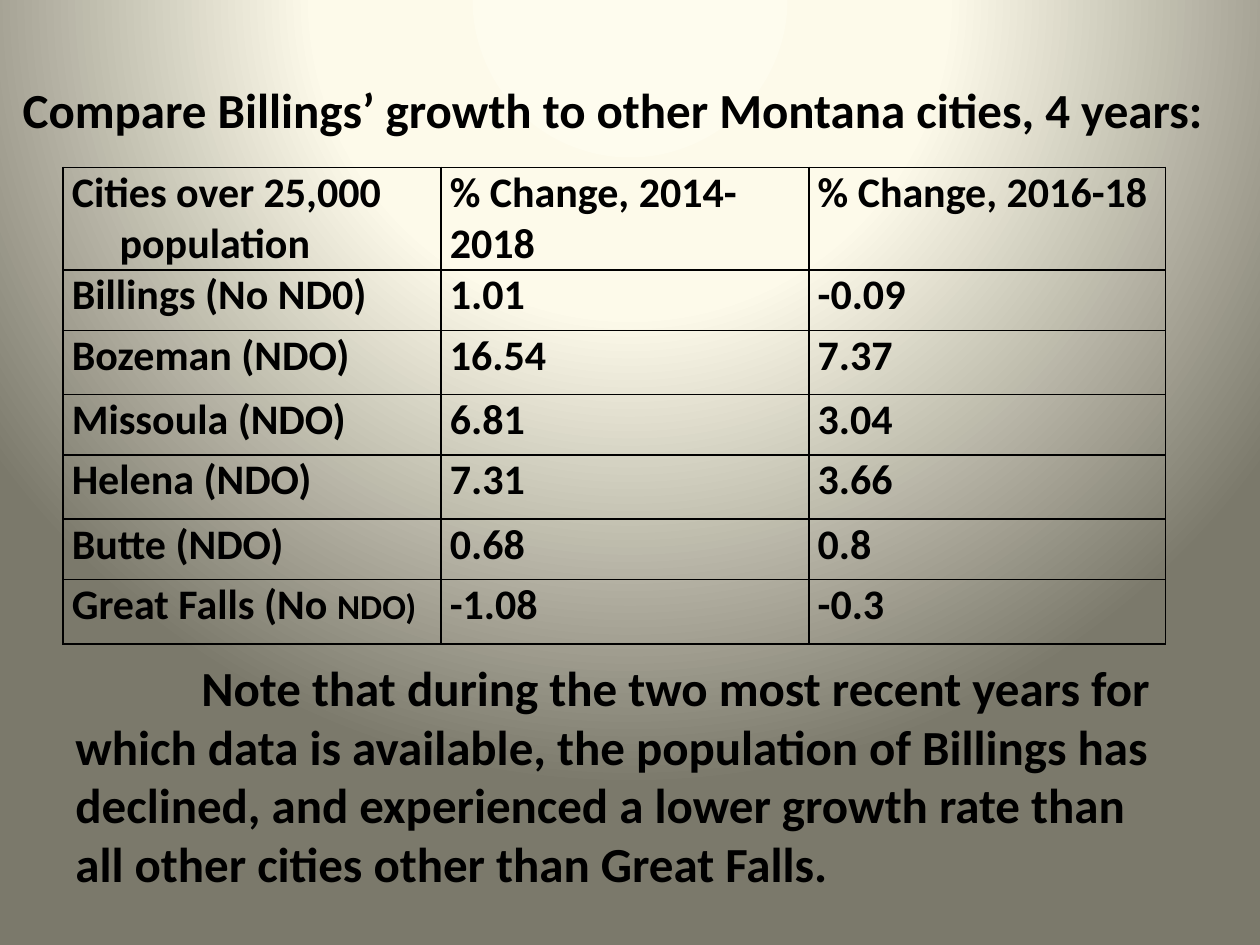
"""Build a slide comparing population growth across Montana cities."""
from dataclasses import dataclass

from pptx import Presentation
from pptx import util as u
from pptx.dml.color import RGBColor
from pptx.enum import text
from pptx.oxml import parse_xml
from pptx.oxml.ns import nsdecls

BLACK = RGBColor(0x00, 0x00, 0x00)
IVORY = RGBColor(0xFE, 0xFC, 0xEE)
CREAM = RGBColor(0xFD, 0xFA, 0xEA)
OLIVE = RGBColor(0x7B, 0x79, 0x6B)

WIDTH, HEIGHT = u.Inches(10), u.Inches(7.5)
FONT = "Calibri"
TITLE_SIZE, CELL_SIZE, SMALL_SIZE = 28, 24, 20
COLUMNS = (3, 2.92, 2.83)
ROW_HEIGHTS = (0.51, 0.48)


@dataclass(frozen=True)
class Area:
    """A rectangle in shares of the slide's size."""
    left: float
    top: float
    width: float
    height: float

    def place(self) -> tuple[int, int, int, int]:
        """Return the rectangle as slide lengths."""
        return (int(self.left * WIDTH), int(self.top * HEIGHT),
                int(self.width * WIDTH), int(self.height * HEIGHT))


@dataclass(frozen=True)
class City:
    """One city's row of the growth table."""
    name: str
    four_years: str
    two_years: str
    small_ending: str = ""


TITLE_AREA = Area(0.008, 0.077, 0.967, 0.076)
TABLE_AREA = Area(0.05, 0.177, 0.875, 0.464)
NOTE_AREA = Area(0.05, 0.689, 0.892, 0.265)

TITLE = "Compare Billings’ growth to other Montana cities, 4 years:"
NOTE = ("Note that during the two most recent years for which data is available, "
        "the population of Billings has declined, and experienced a lower growth "
        "rate than all other cities other than Great Falls.")
CITIES = (
    City("Cities over 25,000\npopulation", "% Change, 2014-2018", "% Change, 2016-18"),
    City("Billings (No ND0)", "1.01", "-0.09"),
    City("Bozeman (NDO)", "16.54", "7.37"),
    City("Missoula (NDO)", "6.81", "3.04"),
    City("Helena (NDO)", "7.31", "3.66"),
    City("Butte (NDO)", "0.68", "0.8"),
    City("Great Falls (No ", "-1.08", "-0.3", "NDO)"),
)


def paint_background(page) -> None:
    """Spread a circular gradient from above the slide."""
    page.background.fill.solid()
    stops = "".join(f'<a:gs pos="{share * 1000}"><a:srgbClr val="{color}"/></a:gs>'
                    for share, color in ((0, IVORY), (40, CREAM), (100, OLIVE)))
    gradient = parse_xml(
        f'<a:gradFill {nsdecls("a")} rotWithShape="1"><a:gsLst>{stops}</a:gsLst>'
        '<a:path path="circle"><a:fillToRect l="50000" t="-80000" r="50000" b="180000"/>'
        '</a:path></a:gradFill>')
    solid = page.element.xpath(".//p:bgPr/a:solidFill")[0]
    solid.getparent().replace(solid, gradient)


def style_paragraph(paragraph, size: float) -> None:
    """Set the bold black type shared by all text."""
    paragraph.alignment = text.PP_ALIGN.LEFT
    font = paragraph.font
    font.name, font.size, font.bold = FONT, u.Pt(size), True
    font.color.rgb = BLACK


def fill_box(shape, area: Area, words: str, indent: float = 0) -> None:
    """Place a shape and write one paragraph in it."""
    shape.left, shape.top, shape.width, shape.height = area.place()
    frame = shape.text_frame
    frame.word_wrap = True
    frame.auto_size = text.MSO_AUTO_SIZE.NONE
    frame.vertical_anchor = text.MSO_ANCHOR.TOP
    paragraph = frame.paragraphs[0]
    paragraph.text = words
    style_paragraph(paragraph, TITLE_SIZE)
    paragraph._p.get_or_add_pPr().set("indent", str(u.Inches(indent)))


def draw_borders(cell) -> None:
    """Outline a cell in black and leave it unfilled."""
    properties = cell._tc.get_or_add_tcPr()
    for side in "LRTB":
        properties.append(parse_xml(
            f'<a:ln{side} {nsdecls("a")} w="{u.Pt(1)}"><a:solidFill>'
            f'<a:srgbClr val="{BLACK}"/></a:solidFill></a:ln{side}>'))
    cell.fill.background()


def fill_cell(cell, words: str, small_ending: str = "") -> None:
    """Write a cell, indenting any line after the first."""
    cell.margin_left = cell.margin_right = u.Inches(0.07)
    cell.margin_top = cell.margin_bottom = 0
    frame = cell.text_frame
    frame.text = words
    for index, paragraph in enumerate(frame.paragraphs):
        style_paragraph(paragraph, CELL_SIZE)
        if index:
            paragraph._p.get_or_add_pPr().set("marL", str(u.Inches(0.38)))
    if small_ending:
        span = frame.paragraphs[-1].add_run()
        span.text = small_ending
        span.font.size = u.Pt(SMALL_SIZE)
    draw_borders(cell)


def add_growth_table(page) -> None:
    """Add the table of cities and their growth."""
    table = page.shapes.add_table(len(CITIES), len(COLUMNS), *TABLE_AREA.place()).table
    table.first_row = table.horz_banding = False
    for column, width in zip(table.columns, COLUMNS):
        column.width = u.Inches(width)
    for index, (row, city) in enumerate(zip(table.rows, CITIES)):
        row.height = u.Inches(ROW_HEIGHTS[index % 2])
        fill_cell(row.cells[0], city.name, city.small_ending)
        fill_cell(row.cells[1], city.four_years)
        fill_cell(row.cells[2], city.two_years)


def main() -> None:
    """Build and save the deck."""
    deck = Presentation()
    deck.slide_width, deck.slide_height = WIDTH, HEIGHT
    page = deck.slides.add_slide(deck.slide_layouts.get_by_name("Title Only"))
    paint_background(page)
    fill_box(page.shapes.title, TITLE_AREA, TITLE)
    add_growth_table(page)
    fill_box(page.shapes.add_textbox(*NOTE_AREA.place()), NOTE_AREA, NOTE, indent=1)
    deck.save("out.pptx")


if __name__ == "__main__":
    main()
